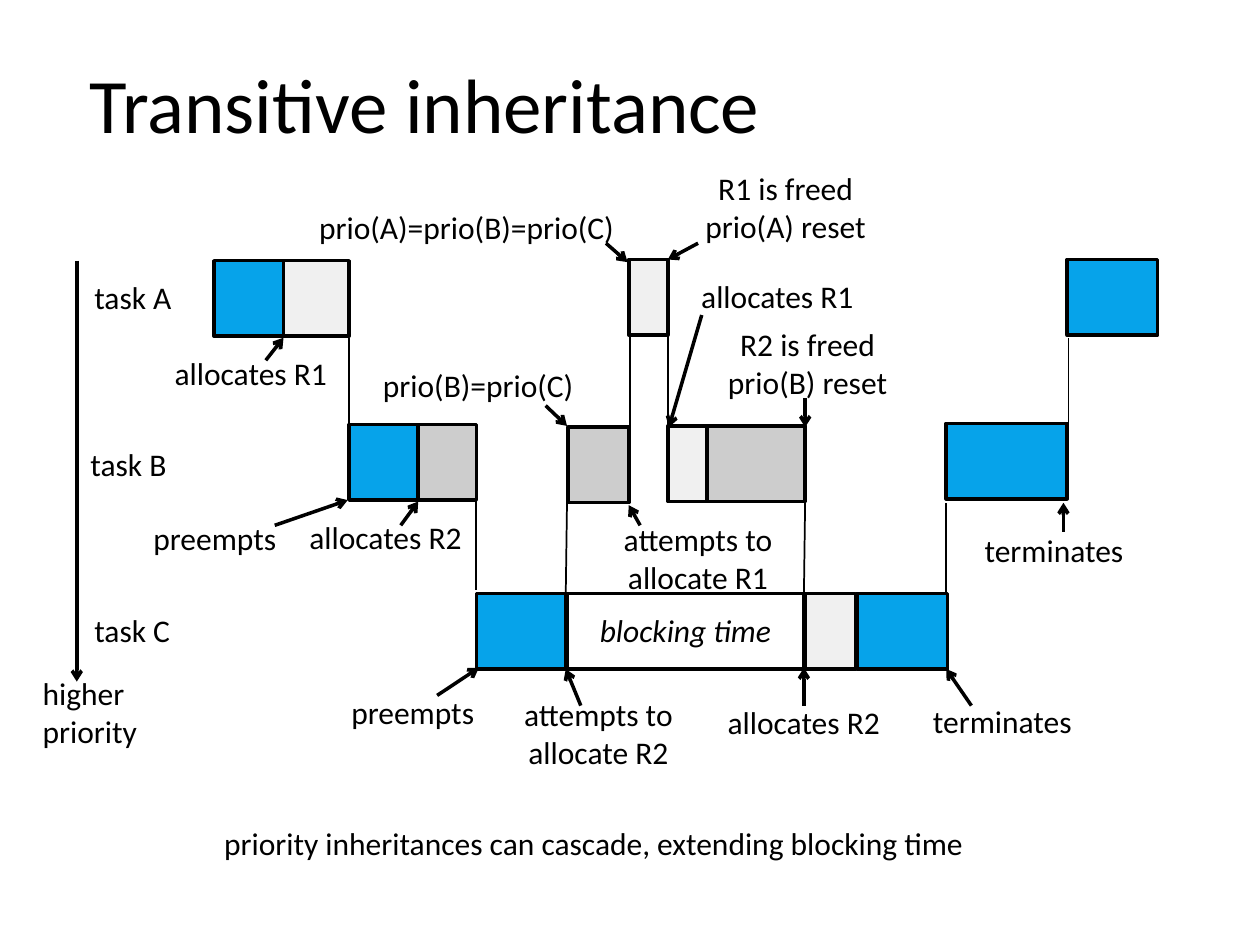
"""Build the slide on transitive priority inheritance."""
import pptx
import pptx.dml.color
import pptx.enum.shapes
import pptx.enum.text
import pptx.oxml.ns
import pptx.util
from lxml import etree

Pt = pptx.util.Pt
Align = pptx.enum.text.PP_ALIGN
FONT = "Calibri"
COLORS = {"ink": "000000", "running": "06A3EA", "holds R1": "D9D9D9", "holds R2": "808080"}
OPACITY = {"holds R1": 39, "holds R2": 39}
BAR_HEIGHT = 43.2
LABEL_HEIGHTS = {1: 28.8, 2: 51.1}

TITLE = ("Transitive inheritance", 43.9, 28.8, 401.8, 60.5)

TASK_BARS = {
    "task A": [
        ("holds R1", 359.3, 148.3, 22.3),
        ("holds R1", 161.3, 149, 38.2),
        ("running", 122.4, 149, 39.6),
        ("running", 609.8, 148.3, 51.8),
    ],
    "task B": [
        ("holds R2", 237.6, 242.6, 34.6),
        ("running", 199.4, 242.6, 39.6),
        ("holds R2", 324.7, 244.1, 34.6),
        ("holds R1", 381.6, 243.4, 22.3),
        ("holds R2", 403.9, 243.4, 56.2),
        ("running", 540.7, 241.9, 69.1),
    ],
    "task C": [
        ("running", 272.2, 339.1, 51.8),
        ("blocked", 323.3, 339.1, 136.1),
        ("holds R1", 460.1, 339.1, 28.8),
        ("running", 489.6, 339.1, 51.8),
    ],
}

SIDE_LABELS = [
    ("task A", 46.8, 155.5, 59),
    ("task B", 44.6, 250.6, 58.3),
    ("task C", 46.8, 345.6, 58.3),
    ("higher\npriority", 17.3, 381.6, 69.1),
    ("priority inheritances can cascade, extending blocking time", 121, 467.3, 442.1),
]

EVENT_LABELS = [
    ("allocates R1", 92.2, 198.7, 102.2),
    ("attempts to\nallocate R2", 291.6, 393.8, 100.8),
    ("R1 is freed\nprio(A) reset", 395.3, 92.9, 107.3),
    ("preempts", 193, 392.4, 85.7),
    ("terminates", 555.1, 300.2, 94.3),
    ("prio(A)=prio(B)=prio(C)", 174.2, 115.2, 185),
    ("allocates R2", 408.2, 398.2, 102.2),
    ("terminates", 525.6, 397.4, 94.3),
    ("preempts", 79.9, 293, 85.7),
    ("allocates R2", 169.2, 292.3, 102.2),
    ("prio(B)=prio(C)", 211, 205.9, 124.6),
    ("attempts to\nallocate R1", 348.5, 293.8, 100.8),
    ("allocates R1", 393.1, 154.8, 102.2),
    ("R2 is freed\nprio(B) reset", 408.2, 182.2, 106.6),
]
BLOCKING_LABEL = ("blocking time", 334.8, 345.6, 113.8)

SWITCHES = [
    (199.4, 243.4, 199.4, 193),
    (272.2, 337, 272.2, 284.4),
    (323.3, 339.1, 324, 287.3),
    (610.6, 243.4, 610.6, 193),
    (459.4, 339.1, 460.1, 285.8),
    (540.7, 338.4, 540.7, 287.3),
    (360, 244.1, 360, 190.1),
    (381.6, 244.1, 381.6, 192.2),
]

PRIORITY_AXIS = (43.9, 149, 43.9, 389.5)
EVENT_ARROWS = [
    (151.9, 205.9, 162, 193),
    (331.9, 403.2, 323.3, 382.3),
    (249.8, 397.4, 273.6, 381.6),
    (607.7, 303.8, 607.7, 287.3),
    (398.9, 139, 381.6, 148.3),
    (346.3, 139, 358.6, 149.8),
    (459.4, 403.2, 459.4, 381.6),
    (555.1, 403.2, 540.7, 382.3),
    (157, 300.2, 198.7, 285.8),
    (229, 300.2, 239, 286.6),
    (311.8, 231.8, 324, 243.4),
    (365.8, 300.2, 359.3, 288.7),
    (401, 180, 382.3, 244.1),
    (460.1, 227.5, 460.1, 244.1),
]


def color(name):
    return pptx.dml.color.RGBColor.from_string(COLORS[name])


def add_xml(parent, tag, **attributes):
    return etree.SubElement(parent, pptx.oxml.ns.qn(tag), **attributes)


def write(shape, text, size, align, italic=False):
    frame = shape.text_frame
    frame.text = text
    frame_format = {
        "word_wrap": False,
        "auto_size": pptx.enum.text.MSO_AUTO_SIZE.SHAPE_TO_FIT_TEXT,
        "vertical_anchor": pptx.enum.text.MSO_ANCHOR.TOP,
    }
    for name, value in frame_format.items():
        setattr(frame, name, value)
    font_format = {"name": FONT, "size": Pt(size), "italic": italic}
    for paragraph in frame.paragraphs:
        paragraph.alignment = align
        for run in paragraph.runs:
            for name, value in font_format.items():
                setattr(run.font, name, value)
            run.font.color.rgb = color("ink")


def add_title(slide):
    text, *place = TITLE
    title = slide.shapes.title
    for name, value in zip(("left", "top", "width", "height"), place):
        setattr(title, name, Pt(value))
    write(title, text, 44, Align.LEFT)


def add_bar(slide, state, left, top, width):
    bar = slide.shapes.add_shape(
        pptx.enum.shapes.MSO_SHAPE.RECTANGLE, Pt(left), Pt(top), Pt(width), Pt(BAR_HEIGHT))
    bar.shadow.inherit = False
    bar.line.color.rgb = color("ink")
    bar.line.width = Pt(2)
    if state not in COLORS:
        bar.fill.background()
        return
    bar.fill.solid()
    bar.fill.fore_color.rgb = color(state)
    if state in OPACITY:
        tint = bar.fill._xPr.find(".//" + pptx.oxml.ns.qn("a:srgbClr"))
        add_xml(tint, "a:alpha", val=str(OPACITY[state] * 1000))


def add_label(slide, label, align, italic=False):
    text, left, top, width = label
    height = LABEL_HEIGHTS[len(text.split("\n"))]
    box = slide.shapes.add_textbox(Pt(left), Pt(top), Pt(width), Pt(height))
    write(box, text, 18, align, italic)


def add_line(slide, ends, width, arrow=False):
    line = slide.shapes.add_connector(
        pptx.enum.shapes.MSO_CONNECTOR.STRAIGHT, *(Pt(value) for value in ends))
    line.line.color.rgb = color("ink")
    line.line.width = Pt(width)
    if arrow:
        add_xml(line.line._get_or_add_ln(), "a:tailEnd", type="arrow")
    add_xml(line._element.spPr, "a:effectLst")


def main():
    deck = pptx.Presentation()
    deck.slide_width, deck.slide_height = Pt(720), Pt(540)
    slide = deck.slides.add_slide(deck.slide_layouts[5])
    add_title(slide)
    for bars in TASK_BARS.values():
        for bar in bars:
            add_bar(slide, *bar)
    for ends in SWITCHES:
        add_line(slide, ends, 1)
    for ends in [PRIORITY_AXIS, *EVENT_ARROWS]:
        add_line(slide, ends, 2, arrow=True)
    for label in SIDE_LABELS:
        add_label(slide, label, Align.LEFT)
    for label in EVENT_LABELS:
        add_label(slide, label, Align.CENTER)
    add_label(slide, BLOCKING_LABEL, Align.CENTER, italic=True)
    deck.save("out.pptx")


if __name__ == "__main__":
    main()
